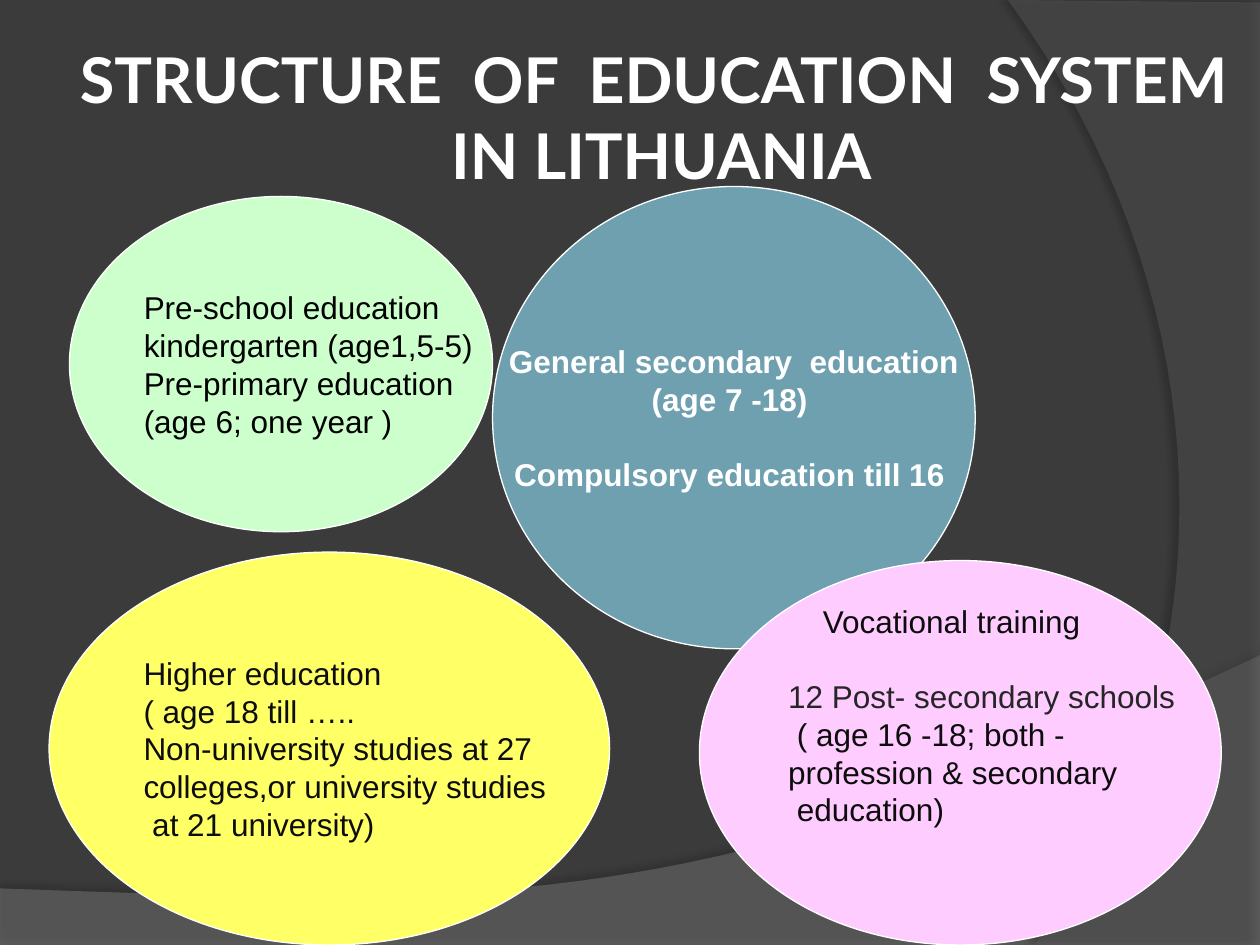
from lxml.etree import SubElement
from pptx import Presentation
from pptx.dml.color import RGBColor
from pptx.enum.shapes import MSO_SHAPE
from pptx.enum.text import MSO_ANCHOR, PP_ALIGN
from pptx.oxml.ns import qn
from pptx.util import Cm, Pt

LINE_HEIGHT = Pt(21.5)
BODY = {"name": "Arial", "size": Pt(18)}
TITLE = {"name": "Lato", "size": Pt(36), "bold": True}


def color(value):
    return RGBColor.from_string(value)


def set_fill(shape, value):
    shape.fill.solid()
    shape.fill.fore_color.rgb = color(value)


def set_opacity(color_element, percent):
    SubElement(color_element, qn("a:alpha"), val=str(percent * 1000))


def format_frame(frame, **values):
    for name, value in values.items():
        setattr(frame, name, value)


def add_line(paragraph, text, font, font_color, **paragraph_format):
    run = paragraph.add_run()
    run.text = text
    for name, value in font.items():
        setattr(run.font, name, value)
    run.font.color.rgb = color(font_color)
    for name, value in paragraph_format.items():
        setattr(paragraph, name, value)


def curve(start, control_1, control_2, end, steps=40):
    """Points along a cubic curve, without its start."""
    points = []
    for step in range(1, steps + 1):
        t = step / steps
        weights = ((1 - t) ** 3, 3 * t * (1 - t) ** 2, 3 * t * t * (1 - t), t ** 3)
        corners = (start, control_1, control_2, end)
        points.append(tuple(sum(w * corner[axis] for w, corner in zip(weights, corners))
                            for axis in (0, 1)))
    return points


def add_backdrop(slide, points, fill, opacity, shadow_opacity, distance, direction):
    points = [(Cm(x), Cm(y)) for x, y in points]
    builder = slide.shapes.build_freeform(*points[0])
    builder.add_line_segments(points[1:], close=True)
    shape = builder.convert_to_shape()
    set_fill(shape, fill)
    shape.line.fill.background()
    properties = shape.fill._xPr
    set_opacity(properties.find(qn("a:solidFill"))[0], opacity)
    # Soft outer shadow
    shape.shadow.inherit = False
    shadow = SubElement(properties.find(qn("a:effectLst")), qn("a:outerShdw"),
                        blurRad=str(Pt(4)), dist=str(Pt(distance)),
                        dir=str(direction * 60000), algn="ctr", rotWithShape="0")
    set_opacity(SubElement(shadow, qn("a:srgbClr"), val="000000"), shadow_opacity)


def add_title(slide, text):
    box = slide.shapes.add_textbox(Cm(1.27), Cm(0.76), Cm(24.13), Cm(3.18))
    format_frame(box.text_frame, word_wrap=True, vertical_anchor=MSO_ANCHOR.MIDDLE,
                 margin_left=Cm(0.13), margin_right=Cm(0.13),
                 margin_top=Cm(0.13), margin_bottom=Cm(0.13))
    add_line(box.text_frame.paragraphs[0], text, TITLE, "FFFFFF", alignment=PP_ALIGN.CENTER)


def add_stage(slide, box, fill, lines, font_color, font=BODY,
              alignment=PP_ALIGN.LEFT, gap_before=None, bottom=Cm(0.13)):
    """An ellipse with one paragraph a line; gap_before is the line after a gap."""
    shape = slide.shapes.add_shape(MSO_SHAPE.OVAL, *map(Cm, box))
    shape.shadow.inherit = False
    set_fill(shape, fill)
    shape.line.color.rgb = color("FFFFFF")
    shape.line.width = Pt(0.75)
    frame = shape.text_frame
    format_frame(frame, word_wrap=False, vertical_anchor=MSO_ANCHOR.MIDDLE,
                 margin_bottom=bottom)
    for index, text in enumerate(lines):
        paragraph = frame.add_paragraph() if index else frame.paragraphs[0]
        gap = LINE_HEIGHT if index == gap_before else 0
        add_line(paragraph, text, font, font_color, alignment=alignment, space_before=gap)
    return frame.paragraphs


def main():
    presentation = Presentation()
    presentation.slide_width, presentation.slide_height = Cm(25.4), Cm(19.05)
    slide = presentation.slides.add_slide(presentation.slide_layouts[6])
    slide.background.fill.solid()
    slide.background.fill.fore_color.rgb = color("3B3B3B")

    # Curved backdrop
    wave = curve((25.4, 13.21), (14.2, 18.52), (9.93, 18.26), (0, 17.91))
    add_backdrop(slide, [(0, 19.05), (25.4, 19.05), (25.4, 13.21)] + wave,
                 "7F7F7F", 45, 35, 3.5, 270)
    side = curve((20.85, 19.05), (23.75, 15.72), (25.86, 7.62), (20.32, 0))
    add_backdrop(slide, [(25.4, 0.05), (25.4, 19.05), (20.85, 19.05)] + side,
                 "5E5E5E", 40, 45, 4, 180)

    add_title(slide, "STRUCTURE  OF  EDUCATION  SYSTEM  IN LITHUANIA")

    # Stages of education
    add_stage(slide, (9.93, 3.76, 9.73, 9.32), "6EA0B0",
              ["General secondary  education", "(age 7 -18) ", "Compulsory education till 16 "],
              "FFFFFF", font={**BODY, "bold": True}, alignment=PP_ALIGN.CENTER, gap_before=2)
    add_stage(slide, (0.99, 11.13, 11.3, 7.92), "FFFF66",
              ["Higher education", "( age 18 till …..", "Non-university studies at 27",
               "colleges,or university studies", " at 21 university)"], "0D0D0D")
    vocational = add_stage(slide, (14.1, 11.3, 10.52, 7.75), "FFCCFF",
                           ["Vocational training", "12 Post- secondary schools",
                            " ( age 16 -18; both -", "profession & secondary", " education)"],
                           "0D0D0D", gap_before=1, bottom=Cm(0.13) + 2 * LINE_HEIGHT)
    vocational[0]._p.get_or_add_pPr().set("marL", str(Cm(0.7)))
    vocational[1].runs[0].font.color.rgb = color("262626")
    add_stage(slide, (1.4, 3.96, 8.53, 6.76), "CCFFCC",
              ["Pre-school education", "kindergarten (age1,5-5)",
               "Pre-primary education", "(age 6; one year )"], "000000")

    presentation.save("out.pptx")


if __name__ == "__main__":
    main()
